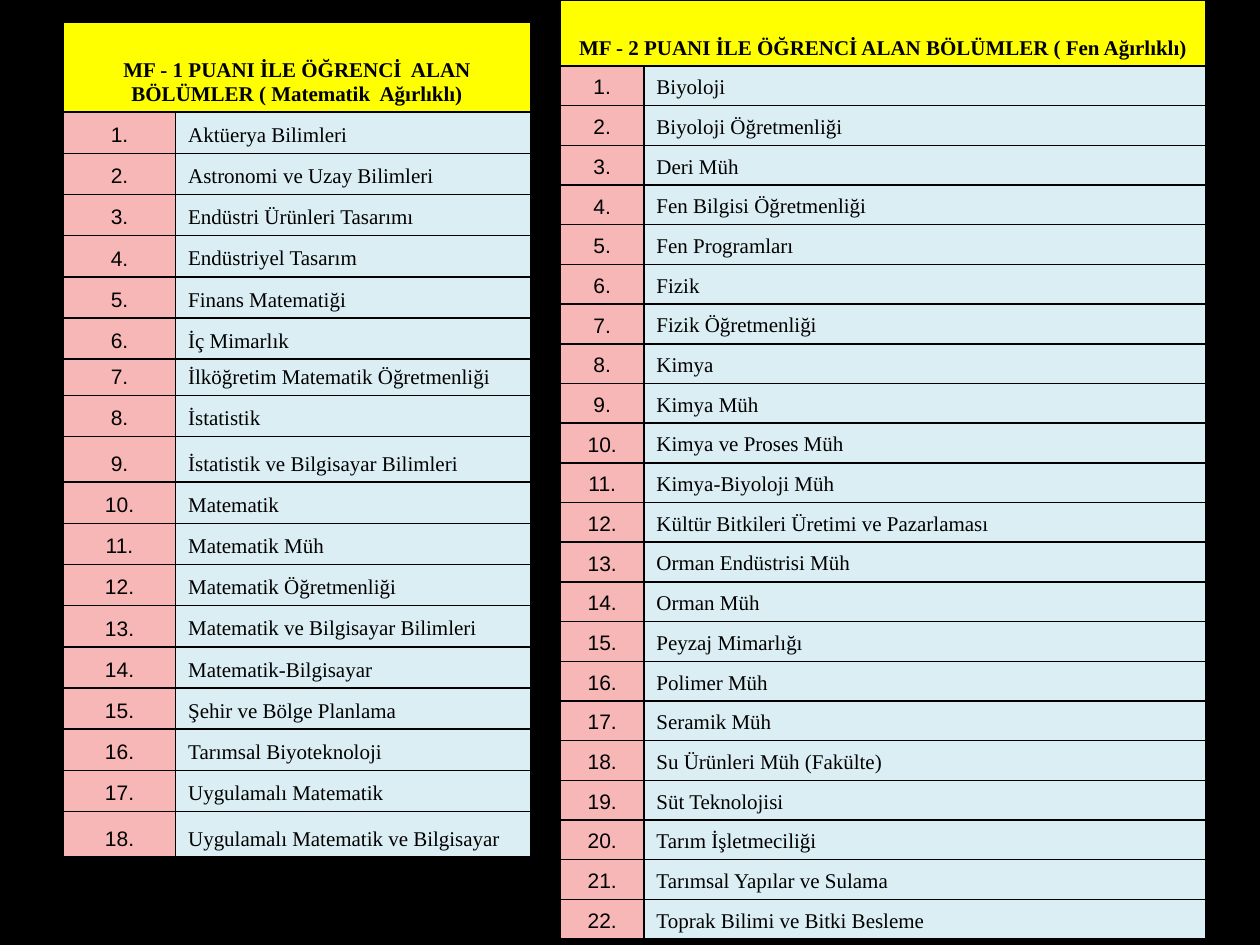
from lxml import etree
from pptx import Presentation
from pptx.dml.color import RGBColor
from pptx.enum.text import MSO_ANCHOR, PP_ALIGN
from pptx.oxml.ns import qn
from pptx.util import Cm, Pt

BOTTOM = MSO_ANCHOR.BOTTOM
LEFT, CENTER = PP_ALIGN.LEFT, PP_ALIGN.CENTER
BLACK, YELLOW, PINK, PALE_BLUE = "000000", "FFFF00", "F8B7B7", "DBEEF4"
SERIF, SANS = "Times New Roman", "Arial"

MF1_TITLE = "MF - 1 PUANI İLE ÖĞRENCİ  ALAN BÖLÜMLER ( Matematik  Ağırlıklı)"
MF1_DEPARTMENTS = [
    "Aktüerya Bilimleri",
    "Astronomi ve Uzay Bilimleri",
    "Endüstri Ürünleri Tasarımı",
    "Endüstriyel Tasarım",
    "Finans Matematiği",
    "İç Mimarlık",
    "İlköğretim Matematik Öğretmenliği",
    "İstatistik",
    "İstatistik ve Bilgisayar Bilimleri",
    "Matematik",
    "Matematik Müh",
    "Matematik Öğretmenliği",
    "Matematik ve Bilgisayar Bilimleri",
    "Matematik-Bilgisayar",
    "Şehir ve Bölge Planlama",
    "Tarımsal Biyoteknoloji",
    "Uygulamalı Matematik",
    "Uygulamalı Matematik ve Bilgisayar",
]
MF2_TITLE = "MF - 2 PUANI İLE ÖĞRENCİ ALAN BÖLÜMLER ( Fen Ağırlıklı)"
MF2_DEPARTMENTS = [
    "Biyoloji",
    "Biyoloji Öğretmenliği",
    "Deri Müh",
    "Fen Bilgisi Öğretmenliği",
    "Fen Programları",
    "Fizik",
    "Fizik Öğretmenliği",
    "Kimya",
    "Kimya Müh",
    "Kimya ve Proses Müh",
    "Kimya-Biyoloji Müh",
    "Kültür Bitkileri Üretimi ve Pazarlaması",
    "Orman Endüstrisi Müh",
    "Orman Müh",
    "Peyzaj Mimarlığı",
    "Polimer Müh",
    "Seramik Müh",
    "Su Ürünleri Müh (Fakülte)",
    "Süt Teknolojisi",
    "Tarım İşletmeciliği",
    "Tarımsal Yapılar ve Sulama",
    "Toprak Bilimi ve Bitki Besleme",
]


def paint(fill, color):
    fill.solid()
    fill.fore_color.rgb = RGBColor.from_string(color)


def add_borders(cell):
    properties = cell._tc.get_or_add_tcPr()
    for side in ("a:lnL", "a:lnR", "a:lnT", "a:lnB"):
        line = etree.SubElement(properties, qn(side), w=str(Pt(1)))
        solid = etree.SubElement(line, qn("a:solidFill"))
        etree.SubElement(solid, qn("a:srgbClr"), val=BLACK)


def write_cell(cell, text, background, font_name, align, bold=False):
    cell.vertical_anchor = BOTTOM
    paint(cell.fill, background)
    paragraph = cell.text_frame.paragraphs[0]
    paragraph.text = text
    paragraph.alignment = align
    font = paragraph.font
    font.name, font.size, font.bold = font_name, Pt(12), bold
    paint(font.fill, BLACK)


def add_department_table(slide, title, departments, left, top, column_widths,
                         title_height, row_height, special_heights):
    heights = [title_height] + [special_heights.get(number, row_height)
                                for number in range(1, len(departments) + 1)]
    table = slide.shapes.add_table(
        len(heights), 2, Cm(left), Cm(top),
        Cm(sum(column_widths)), Cm(sum(heights))).table
    for column, width in zip(table.columns, column_widths):
        column.width = Cm(width)
    for row, height in zip(table.rows, heights):
        row.height = Cm(height)
    for cell in table.iter_cells():
        add_borders(cell)

    table.cell(0, 0).merge(table.cell(0, 1))
    write_cell(table.cell(0, 0), title, YELLOW, SERIF, CENTER, bold=True)
    for number, department in enumerate(departments, 1):
        write_cell(table.cell(number, 0), f"{number}.", PINK, SANS, CENTER)
        write_cell(table.cell(number, 1), department, PALE_BLUE, SERIF, LEFT)


def main():
    presentation = Presentation()
    presentation.slide_width, presentation.slide_height = Cm(25.4), Cm(19.05)
    slide = presentation.slides.add_slide(presentation.slide_layouts[6])
    paint(slide.background.fill, BLACK)
    add_department_table(slide, MF1_TITLE, MF1_DEPARTMENTS, 1.28, 0.44,
                         (2.26, 7.16), 1.82, 0.83, {7: 0.72, 9: 0.92, 18: 0.92})
    add_department_table(slide, MF2_TITLE, MF2_DEPARTMENTS, 11.3, 0,
                         (1.68, 11.33), 1.33, 0.8, {})
    presentation.save("out.pptx")


if __name__ == "__main__":
    main()
